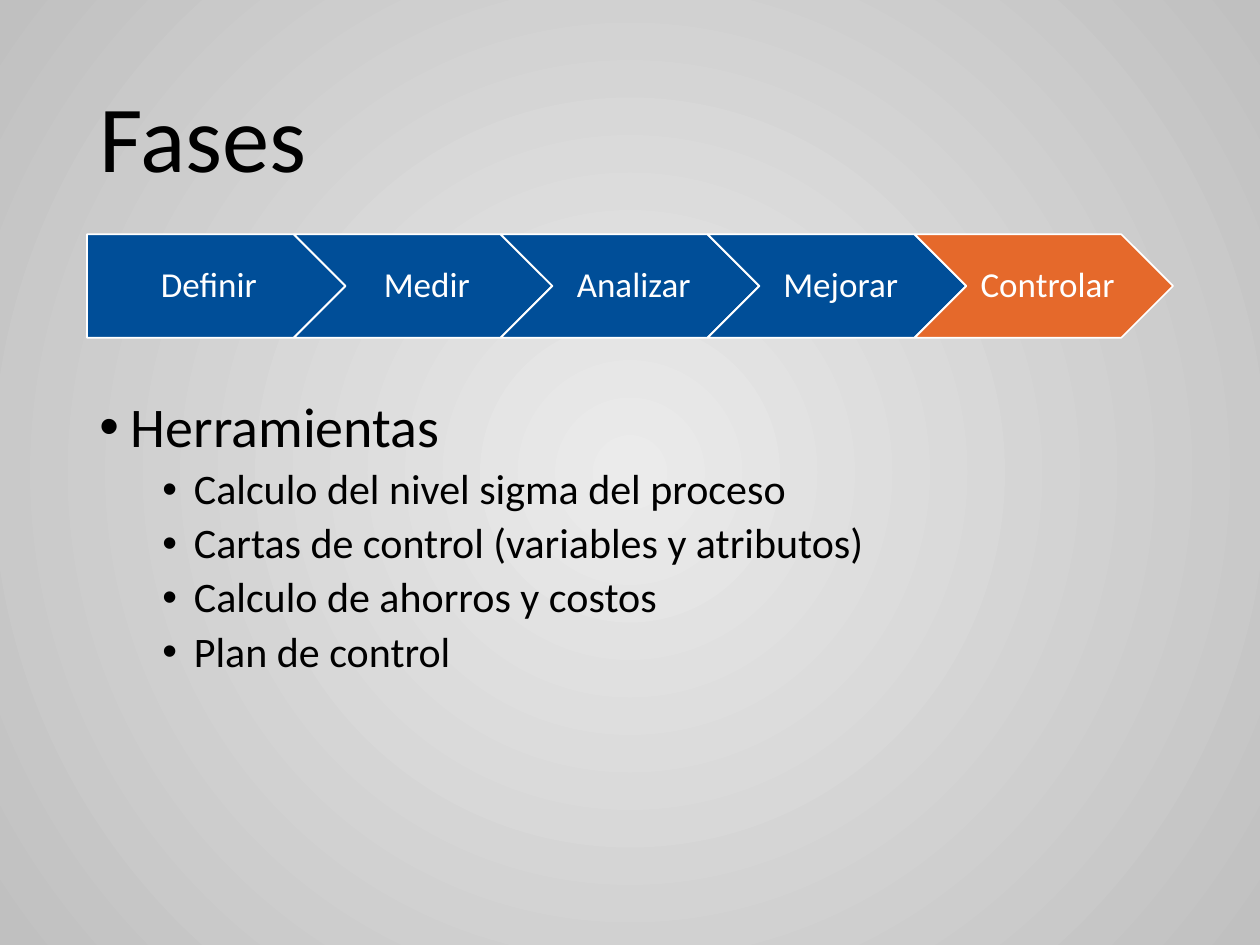
from lxml.etree import SubElement
from pptx import Presentation
from pptx.dml.color import RGBColor
from pptx.enum.shapes import MSO_SHAPE as Shape
from pptx.enum.text import MSO_ANCHOR as Anchor, PP_ALIGN as Align
from pptx.oxml import parse_xml
from pptx.oxml.ns import nsdecls, qn
from pptx.util import Inches, Pt

BLACK = RGBColor(0x00, 0x00, 0x00)
WHITE = RGBColor(0xFF, 0xFF, 0xFF)
BLUE = RGBColor(0x00, 0x4E, 0x98)
ORANGE = RGBColor(0xE5, 0x69, 0x2B)
LIGHT_GRAY = RGBColor(0xEB, 0xEB, 0xEB)
GRAY = RGBColor(0xC0, 0xC0, 0xC0)

LEFT, WIDTH = 0.69, 8.62
PHASES = ["Definir", "Medir", "Analizar", "Mejorar", "Controlar"]
CURRENT_PHASE = "Controlar"
PHASE_TOP, PHASE_WIDTH, PHASE_HEIGHT = 1.86, 2.05, 0.82
PHASE_STEP = (WIDTH - PHASE_WIDTH) / (len(PHASES) - 1)
TOOLS = [
    (0, "Herramientas"),
    (1, "Calculo del nivel sigma del proceso"),
    (1, "Cartas de control (variables y atributos)"),
    (1, "Calculo de ahorros y costos"),
    (1, "Plan de control"),
]
LEVELS = [
    {"size": 32, "space": 10, "indent": 0.25},
    {"size": 24, "space": 5, "indent": 0.75},
]


def place(item, left, top, width, height):
    values = {"left": left, "top": top, "width": width, "height": height}
    for name, value in values.items():
        setattr(item, name, Inches(value))


def write(para, text, size, color, align):
    para.alignment = align
    para.line_spacing = 0.9
    span = para.add_run()
    span.text = text
    span.font.color.rgb = color
    for name, value in {"name": "Calibri", "size": Pt(size)}.items():
        setattr(span.font, name, value)


deck = Presentation()
deck.slide_width, deck.slide_height = Inches(10), Inches(7.5)
page = deck.slides.add_slide(deck.slide_layouts[5])

background = page.background.fill
background.gradient()
for stop, position, color in zip(background.gradient_stops, (0, 1), (LIGHT_GRAY, GRAY)):
    stop.position = position
    stop.color.rgb = color
linear = next(page.element.iter(qn("a:lin")))
linear.getparent().replace(linear, parse_xml(
    f'<a:path {nsdecls("a")} path="circle">'
    '<a:fillToRect l="50000" t="50000" r="50000" b="50000"/></a:path>'
))

title = page.shapes.title
place(title, LEFT, 0.4, WIDTH, 1.45)
title.text_frame.vertical_anchor = Anchor.MIDDLE
write(title.text_frame.paragraphs[0], "Fases", 54, BLACK, Align.LEFT)

process = page.shapes.add_group_shape()
for index, phase in enumerate(PHASES):
    arrow = process.shapes.add_shape(
        Shape.CHEVRON if index else Shape.PENTAGON,
        Inches(LEFT + index * PHASE_STEP), Inches(PHASE_TOP),
        Inches(PHASE_WIDTH), Inches(PHASE_HEIGHT),
    )
    arrow.shadow.inherit = False
    arrow.fill.solid()
    arrow.fill.fore_color.rgb = ORANGE if phase == CURRENT_PHASE else BLUE
    arrow.line.color.rgb = WHITE
    arrow.line.width = Pt(1)
    frame = arrow.text_frame
    frame_format = {
        "margin_left": Inches(0.09 if index else 0.12),
        "margin_right": Inches(0.03),
        "margin_top": Inches(0.06),
        "margin_bottom": Inches(0.06),
        "vertical_anchor": Anchor.MIDDLE,
        "word_wrap": True,
    }
    for name, value in frame_format.items():
        setattr(frame, name, value)
    write(frame.paragraphs[0], phase, 20, WHITE, Align.CENTER)

box = page.shapes.add_textbox(Inches(LEFT), Inches(3.12), Inches(WIDTH), Inches(3.63))
box.text_frame.word_wrap = True
for index, (level, text) in enumerate(TOOLS):
    para = box.text_frame.add_paragraph() if index else box.text_frame.paragraphs[0]
    style = LEVELS[level]
    para.level = level
    para.space_before = Pt(style["space"])
    write(para, text, style["size"], BLACK, Align.LEFT)
    properties = para._p.get_or_add_pPr()
    properties.set("marL", str(Inches(style["indent"])))
    properties.set("indent", str(Inches(-0.25)))
    SubElement(properties, qn("a:buFont"), typeface="Arial")
    SubElement(properties, qn("a:buChar"), char="•")

deck.save("out.pptx")
